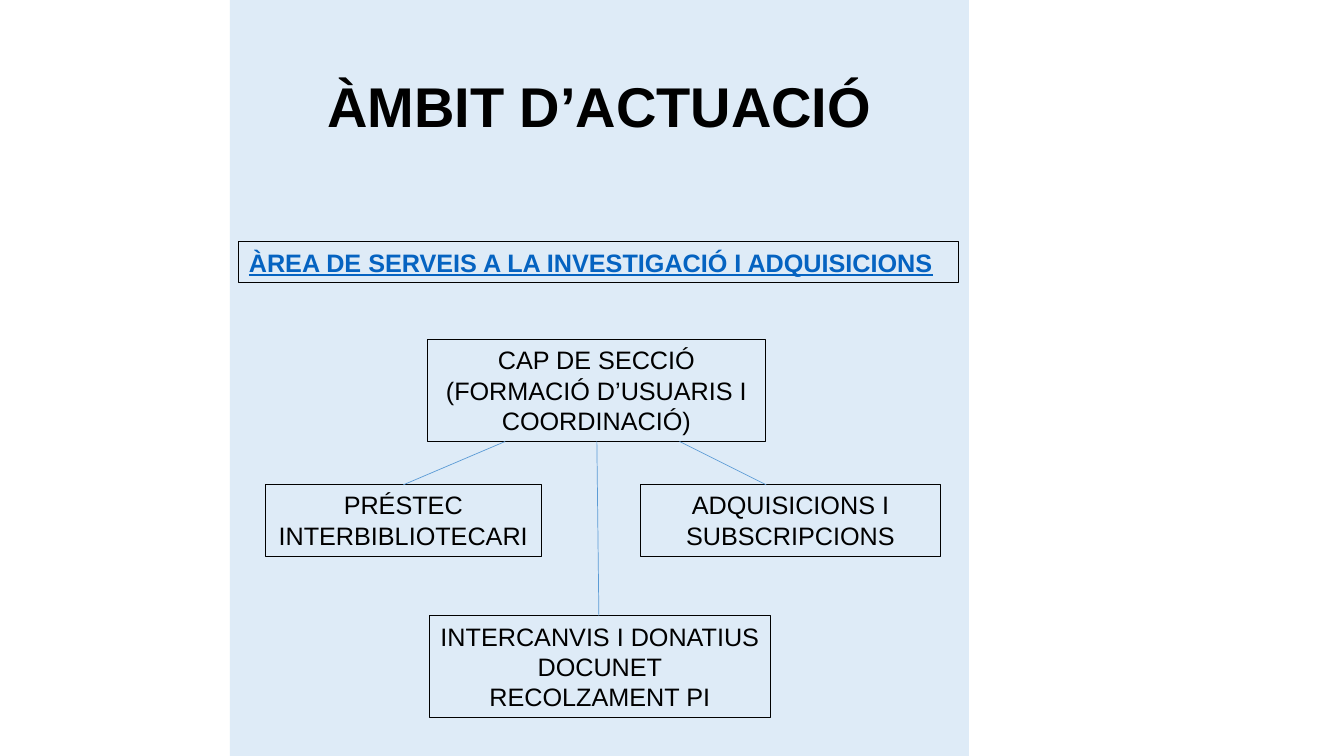
"""Build the slide showing the organisation of the research services area."""
import pptx
import pptx.dml.color
import pptx.enum.shapes
import pptx.enum.text
import pptx.oxml
import pptx.util

Inches = pptx.util.Inches
Pt = pptx.util.Pt
ALIGN = pptx.enum.text.PP_ALIGN

THEME = {
    "font": "Arial",
    "title_size": Pt(40),
    "box_size": Pt(18),
    "border_width": Pt(0.75),
    "branch_width": Pt(0.5),
    "panel": pptx.dml.color.RGBColor.from_string("DEEBF7"),
    "text": pptx.dml.color.RGBColor.from_string("000000"),
    "heading": pptx.dml.color.RGBColor.from_string("0563C1"),
    "branch": pptx.dml.color.RGBColor.from_string("5B9BD5"),
}


def write_text(shape, text, size, color, alignment, bold=False, underline=False):
    """Fill a shape with text in one consistent style."""
    frame = shape.text_frame
    frame.text = text
    frame.word_wrap = True
    frame.auto_size = pptx.enum.text.MSO_AUTO_SIZE.NONE
    for paragraph in frame.paragraphs:
        paragraph.alignment = alignment
        for run in paragraph.runs:
            run.font.name = THEME["font"]
            run.font.size = size
            run.font.color.rgb = color
            run.font.bold = bold
            run.font.underline = underline


def add_box(left, top, width, height, text, color=THEME["text"], alignment=ALIGN.CENTER, strong=False):
    """Add a bordered text box to the chart."""
    box = slide.shapes.add_textbox(Inches(left), Inches(top), Inches(width), Inches(height))
    box.line.color.rgb = THEME["text"]
    box.line.width = THEME["border_width"]
    write_text(box, text, THEME["box_size"], color, alignment, bold=strong, underline=strong)


presentation = pptx.Presentation()
presentation.slide_width = Inches(13.33)
presentation.slide_height = Inches(7.5)
slide = presentation.slides.add_slide(presentation.slide_layouts[5])

title = slide.shapes.title
title.left, title.top = Inches(1.43), Inches(0.66)
title.width, title.height = Inches(9.03), Inches(0.77)
write_text(title, "ÀMBIT D’ACTUACIÓ", THEME["title_size"], THEME["text"], ALIGN.CENTER, bold=True)
title.text_frame.vertical_anchor = pptx.enum.text.MSO_ANCHOR.TOP

panel = slide.shapes.add_shape(
    pptx.enum.shapes.MSO_SHAPE.RECTANGLE, Inches(2.28), 0, Inches(7.33), presentation.slide_height
)
panel.shadow.inherit = False
panel.fill.solid()
panel.fill.fore_color.rgb = THEME["panel"]
panel.line.fill.background()
title.element.addprevious(panel.element)

add_box(
    2.37, 2.4, 7.14, 0.4, "ÀREA DE SERVEIS A LA INVESTIGACIÓ I ADQUISICIONS",
    color=THEME["heading"], alignment=ALIGN.LEFT, strong=True,
)

head_bottom, team_top, support_top = 4.38, 4.81, 6.11
for left, top, width, height, text in [
    (4.24, 3.37, 3.35, 1.01, "CAP DE SECCIÓ (FORMACIÓ D’USUARIS I COORDINACIÓ)"),
    (2.63, team_top, 2.74, 0.71, "PRÉSTEC INTERBIBLIOTECARI"),
    (6.35, team_top, 2.98, 0.71, "ADQUISICIONS I SUBSCRIPCIONS"),
    (4.26, support_top, 3.38, 1.01, "INTERCANVIS I DONATIUS\nDOCUNET\nRECOLZAMENT PI"),
]:
    add_box(left, top, width, height, text)

for start_x, end_x, end_y in [(5.01, 4, team_top), (6.74, 7.6, team_top), (5.92, 5.94, support_top)]:
    branch = slide.shapes.add_connector(
        pptx.enum.shapes.MSO_CONNECTOR.STRAIGHT,
        Inches(start_x), Inches(head_bottom), Inches(end_x), Inches(end_y),
    )
    branch.line.color.rgb = THEME["branch"]
    branch.line.width = THEME["branch_width"]
    branch.element.spPr.append(pptx.oxml.parse_xml(
        '<a:effectLst xmlns:a="http://schemas.openxmlformats.org/drawingml/2006/main"/>'
    ))

presentation.save("out.pptx")
